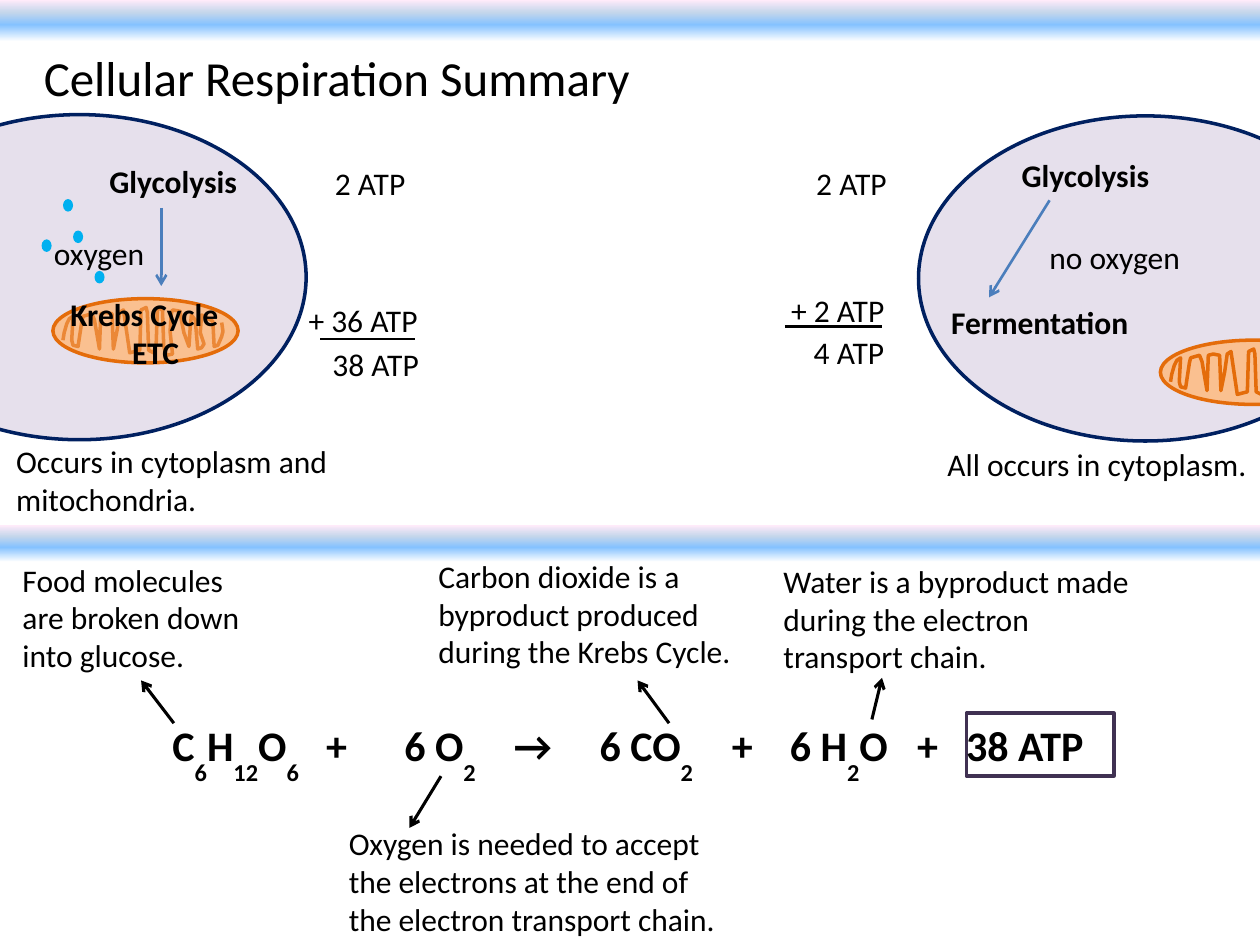
from dataclasses import dataclass

from lxml import etree
from pptx import Presentation
from pptx.dml.color import RGBColor
from pptx.enum.shapes import MSO_CONNECTOR, MSO_SHAPE
from pptx.enum.text import MSO_AUTO_SIZE, PP_ALIGN
from pptx.oxml.ns import qn
from pptx.util import Pt

PX = 9144
FONT = "Calibri"
BLACK = "000000"
BLUE = "4B7EBC"
ORANGE = "E46C0A"
RECTANGLE = MSO_SHAPE.RECTANGLE
OVAL = MSO_SHAPE.OVAL
STRAIGHT = MSO_CONNECTOR.STRAIGHT
GROW = MSO_AUTO_SIZE.SHAPE_TO_FIT_TEXT
CENTER = PP_ALIGN.CENTER
LEFT = PP_ALIGN.LEFT


@dataclass
class Label:
    text: str
    left: int
    top: int
    width: int
    height: int = 40
    size: int = 18
    bold: bool = False


@dataclass
class Stroke:
    x1: int
    y1: int
    x2: int
    y2: int
    color: str = BLACK
    width: float = 1.5
    arrow: bool = True


BANDS = [(0, 33), (417, 29)]
BAND_STOPS = [(0, "FFFFFF"), (40, "85C2FF"), (70, "C4D6EB"), (100, "FFEBFA")]
CELLS = [(-117, 91), (729, 92)]
MITOCHONDRIA = [(42, 237, 66), (921, 270, 100)]
OXYGEN_DOTS = [(33, 190), (58, 183), (50, 158), (75, 215)]
MEMBRANE_FOLDS = [
    (8, 33), (9, 27), (11, 20), (13, 16), (16, 14), (15, 33), (16, 37), (20, 38),
    (23, 18), (24, 14), (31, 12), (33, 17), (37, 40), (38, 12), (42, 11), (47, 12),
    (48, 40), (51, 25), (53, 11), (56, 9), (61, 43), (69, 41), (70, 9), (74, 7),
    (75, 11), (76, 41), (80, 43), (82, 36), (83, 7), (87, 9), (88, 38), (90, 45),
    (95, 44), (93, 26), (94, 12), (95, 9), (101, 10), (102, 17), (104, 27), (108, 38),
    (109, 23), (110, 13), (113, 17), (115, 40), (118, 39), (120, 36), (117, 27),
    (118, 13), (127, 18), (128, 38), (131, 37), (134, 30), (135, 26), (134, 19),
]
LABELS = [
    Label("Cellular Respiration Summary", 25, 33, 850, 57, size=28),
    Label("Glycolysis", 77, 124, 130, bold=True),
    Label("oxygen", 33, 181, 142),
    Label("2 ATP", 256, 125, 83),
    Label("+ 36 ATP", 235, 234, 119),
    Label("38 ATP", 254, 269, 98),
    Label("Krebs Cycle\nETC", 46, 229, 155, 71, bold=True),
    Label("Occurs in cytoplasm and mitochondria.", 3, 346, 305, 71),
    Label("Glycolysis", 801, 119, 127, bold=True),
    Label("no oxygen", 823, 184, 142),
    Label("2 ATP", 638, 125, 83),
    Label("Fermentation", 745, 236, 176, bold=True),
    Label("+ 2 ATP", 618, 226, 119),
    Label("4 ATP", 636, 259, 98),
    Label("All occurs in cytoplasm.", 742, 348, 305),
    Label("Food molecules are broken down into glucose.", 8, 440, 195, 101),
    Label("Carbon dioxide is a byproduct produced during the Krebs Cycle.", 338, 437, 262, 101),
    Label("Water is a byproduct made during the electron transport chain.", 612, 441, 296, 101),
    Label("Oxygen is needed to accept the electrons at the end of the electron transport chain.",
          267, 649, 317, 101),
]
STROKES = [
    Stroke(128, 165, 128, 227, BLUE),
    Stroke(833, 159, 785, 236, BLUE),
    Stroke(254, 269, 329, 269, arrow=False),
    Stroke(623, 259, 700, 259, arrow=False),
    Stroke(350, 616, 325, 657, width=1.75),
    Stroke(138, 574, 112, 540, width=1.75),
    Stroke(531, 574, 506, 540, width=1.75),
    Stroke(692, 571, 700, 538, width=1.75),
]
EQUATION = [
    ("C", False), ("6", True), ("H", False), ("12", True), ("O", False), ("6", True),
    ("\t+\t6 O", False), ("2", True), ("\t→\t6 CO", False), ("2", True),
    ("\t+\t6 H", False), ("2", True), ("O\t+\t38 ATP", False),
]
EQUATION_LEFT = 127
EQUATION_STOPS = [259, 321, 408, 476, 581, 627, 728, 767]
INSET = 10


def rgb(color: str) -> RGBColor:
    return RGBColor.from_string(color)


def style(shape, fill: str = "", line: str = "", width: float = 2) -> None:
    shape.shadow.inherit = False
    if fill:
        shape.fill.solid()
        shape.fill.fore_color.rgb = rgb(fill)
    else:
        shape.fill.background()
    if line:
        shape.line.color.rgb = rgb(line)
        shape.line.width = Pt(width)
    else:
        shape.line.fill.background()


def add_preset(page, kind, left: int, top: int, width: int, height: int,
               fill: str = "", line: str = ""):
    shape = page.shapes.add_shape(kind, left * PX, top * PX, width * PX, height * PX)
    style(shape, fill, line)
    return shape


def add_band(page, top: int, height: int) -> None:
    band = add_preset(page, RECTANGLE, 0, top, 1000, height)
    band.fill.gradient()
    band.fill.gradient_angle = 90
    stops = band._element.spPr.find(".//" + qn("a:gsLst"))
    for stop in list(stops):
        stops.remove(stop)
    for position, color in BAND_STOPS:
        stop = etree.SubElement(stops, qn("a:gs"), pos=str(position * 1000))
        etree.SubElement(stop, qn("a:srgbClr"), val=color)


def add_mitochondrion(page, left: int, top: int, opacity: int) -> None:
    add_preset(page, OVAL, left, top, 147, 51, "FAC090", ORANGE)
    points = [(left + x, top + y) for x, y in MEMBRANE_FOLDS]
    builder = page.shapes.build_freeform(*points[0], scale=PX)
    builder.add_line_segments(points[1:], close=False)
    folds = builder.convert_to_shape()
    style(folds, line=ORANGE)
    if opacity < 100:
        color = folds._element.spPr.find(qn("a:ln")).find(".//" + qn("a:srgbClr"))
        etree.SubElement(color, qn("a:alpha"), val=str(opacity * 1000))


def add_frame(page, left: int, top: int, width: int, height: int):
    box = page.shapes.add_textbox(left * PX, top * PX, width * PX, height * PX)
    box.text_frame.word_wrap = True
    box.text_frame.auto_size = GROW
    return box.text_frame


def set_font(para, size: int, bold: bool) -> None:
    para.font.name = FONT
    para.font.size = Pt(size)
    para.font.bold = bold
    para.font.color.rgb = rgb(BLACK)


def add_label(page, label: Label) -> None:
    frame = add_frame(page, label.left, label.top, label.width, label.height)
    frame.text = label.text
    for index, para in enumerate(frame.paragraphs):
        para.alignment = CENTER if index else LEFT
        set_font(para, label.size, label.bold)


def add_equation(page) -> None:
    para = add_frame(page, EQUATION_LEFT, 566, 828, 50).paragraphs[0]
    set_font(para, 24, True)
    tabs = etree.Element(qn("a:tabLst"))
    for stop in EQUATION_STOPS:
        position = (stop - EQUATION_LEFT - INSET) * PX
        etree.SubElement(tabs, qn("a:tab"), pos=str(position), algn="l")
    para._p.get_or_add_pPr().insert(0, tabs)
    for text, subscript in EQUATION:
        span = para.add_run()
        span.text = text
        if subscript:
            span.font._element.set("baseline", "-48000")


def add_stroke(page, stroke: Stroke) -> None:
    ends = [value * PX for value in (stroke.x1, stroke.y1, stroke.x2, stroke.y2)]
    connector = page.shapes.add_connector(STRAIGHT, *ends)
    connector.line.color.rgb = rgb(stroke.color)
    connector.line.width = Pt(stroke.width)
    properties = connector._element.spPr
    if stroke.arrow:
        etree.SubElement(properties.find(qn("a:ln")), qn("a:tailEnd"), type="arrow")
    etree.SubElement(properties, qn("a:effectLst"))


def main() -> None:
    deck = Presentation()
    deck.slide_width, deck.slide_height = 1000 * PX, 750 * PX
    page = deck.slides.add_slide(deck.slide_layouts[6])
    for left, top in CELLS:
        add_preset(page, OVAL, left, top, 360, 258, "E6E0EC", "002060")
    for top, height in BANDS:
        add_band(page, top, height)
    for left, top, opacity in MITOCHONDRIA:
        add_mitochondrion(page, left, top, opacity)
    for left, top in OXYGEN_DOTS:
        add_preset(page, OVAL, left, top, 8, 10, "00B0F0")
    add_preset(page, RECTANGLE, 767, 566, 117, 50, line="403152")
    for label in LABELS:
        add_label(page, label)
    add_equation(page)
    for stroke in STROKES:
        add_stroke(page, stroke)
    deck.save("out.pptx")


if __name__ == "__main__":
    main()
